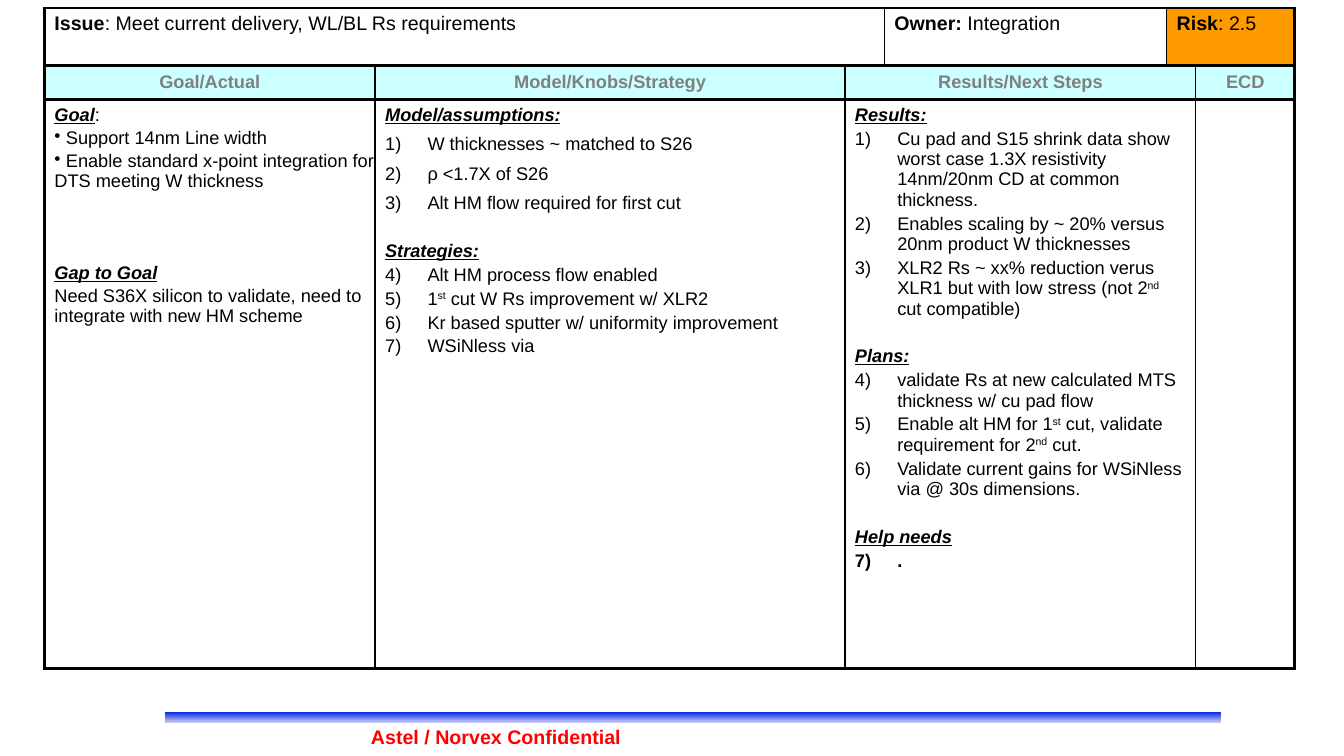
from lxml import etree
from pptx import Presentation
from pptx.dml.color import RGBColor
from pptx.enum import shapes, text
from pptx.oxml import ns
from pptx.util import Inches, Pt

BLACK = RGBColor(0, 0, 0)
WHITE = RGBColor(255, 255, 255)
GRAY = RGBColor(0x80, 0x80, 0x80)
RED = RGBColor(255, 0, 0)
CYAN = RGBColor(0xCC, 255, 255)
ORANGE = RGBColor(255, 0x99, 0)
BLUE = RGBColor(0, 0x20, 0xE0)
PALE = RGBColor(0xDA, 0xDA, 0xF6)

HEADS = ["Goal/Actual", "Model/Knobs/Strategy", "Results/Next Steps", "ECD"]
TOP = [("Issue", ": Meet current delivery, WL/BL Rs requirements"),
       ("Owner:", " Integration"), ("Risk", ": 2.5")]
GOALS = ["Support 14nm Line width",
         "Enable standard x-point integration for DTS meeting W thickness"]
GAP = "Need S36X silicon to validate, need to integrate with new HM scheme"
MODEL = [
    ("Model/assumptions:", 6.5, [
        "W thicknesses ~ matched to S26",
        "ρ <1.7X of S26",
        "Alt HM flow required for first cut"]),
    ("Strategies:", 2.6, [
        "Alt HM process flow enabled",
        "1^st^ cut W Rs improvement w/ XLR2",
        "Kr based sputter w/ uniformity improvement",
        "WSiNless via"])]
STEPS = [
    ("Results:", 2.6, [
        "Cu pad and S15 shrink data show worst case 1.3X resistivity "
        "14nm/20nm CD at common thickness.",
        "Enables scaling by ~ 20% versus 20nm product W thicknesses",
        "XLR2 Rs ~ xx% reduction verus XLR1 but with low stress "
        "(not 2^nd^ cut compatible)"]),
    ("Plans:", 2.6, [
        "validate Rs at new calculated MTS thickness w/ cu pad flow",
        "Enable alt HM for 1^st^ cut, validate requirement for 2^nd^ cut.",
        "Validate current gains for WSiNless via @ 30s dimensions."]),
    ("Help needs", 2.6, ["."])]


def style(para, size=13, color=BLACK, bold=False):
    """Set the common font of a paragraph."""
    font = para.font
    font.name, font.size, font.bold = "Arial", Pt(size), bold
    font.color.rgb = color


def add_para(frame, gap=0):
    """Return the empty first paragraph, or a new one with space before it."""
    first = frame.paragraphs[0]
    if not first.runs:
        return first
    para = frame.add_paragraph()
    para.space_before = Pt(gap)
    return para


def add_runs(para, words):
    """Add words, raising the parts between carets."""
    for i, part in enumerate(words.split("^")):
        run = para.add_run()
        run.text = part
        if i % 2:
            run._r.get_or_add_rPr().set("baseline", "30000")


def add_head(frame, words, gap=0):
    """Add a bold, italic, underlined heading."""
    para = add_para(frame, gap)
    run = para.add_run()
    run.text = words
    style(para)
    run.font.bold = run.font.italic = run.font.underline = True
    return para


def add_bullet(para, tag, indent=0, **attrs):
    """Give a paragraph a bullet element and a hanging indent."""
    props = para._p.get_or_add_pPr()
    props.set("marL", str(Inches(indent)))
    props.set("indent", str(Inches(-indent)))
    mark = etree.SubElement(props, ns.qn(tag))
    for key, value in attrs.items():
        mark.set(key, value)


def add_lists(frame, groups):
    """Add headed lists whose numbers run on from one to the next."""
    start = 1
    for head, gap, items in groups:
        add_head(frame, head, 19.5)
        for item in items:
            para = add_para(frame, gap)
            add_bullet(para, "a:buAutoNum", 0.42,
                       type="arabicParenR", startAt=str(start))
            add_runs(para, item)
            style(para, bold=item == ".")
        start += len(items)


def add_goals(frame):
    """Fill the goal cell."""
    add_head(frame, "Goal")
    colon = frame.paragraphs[0].add_run()
    colon.text = ":"
    for goal in GOALS:
        para = add_para(frame, 1.95)
        add_bullet(para, "a:buChar", char="•")
        add_runs(para, " " + goal)
        style(para)
    add_head(frame, "Gap to Goal", 51)
    para = add_para(frame, 1.95)
    add_runs(para, GAP)
    style(para)


def set_edges(cell, first, last):
    """Draw thick outer and row lines, and thin lines between columns."""
    props = cell._tc.get_or_add_tcPr()
    sides = {"L": first, "R": last, "T": True, "B": True}
    for side, thick in sides.items():
        line = etree.SubElement(props, ns.qn("a:ln" + side))
        line.set("w", str(Pt(2.25 if thick else 1)))
        fill = etree.SubElement(line, ns.qn("a:solidFill"))
        etree.SubElement(fill, ns.qn("a:srgbClr")).set("val", str(BLACK))


def add_grid(slide, top, cols, rows):
    """Add a bordered table without a banded style."""
    frame = slide.shapes.add_table(len(rows), len(cols), Inches(0.44), Inches(top),
                                   Inches(sum(cols)), Inches(sum(rows)))
    grid = frame.table
    grid.first_row = grid.horz_banding = False
    for col, width in zip(grid.columns, cols):
        col.width = Inches(width)
    for row, height in zip(grid.rows, rows):
        row.height = Inches(height)
        for i, cell in enumerate(row.cells):
            set_edges(cell, i == 0, i == len(cols) - 1)
            cell.fill.background()
    return grid


def add_plan(slide):
    """Add the main table."""
    grid = add_grid(slide, 0.65, [3.28, 4.66, 3.48, 0.98], [0.34, 5.64])
    for i, head in enumerate(HEADS):
        cell = grid.cell(0, i)
        cell.fill.solid()
        cell.fill.fore_color.rgb = CYAN
        cell.vertical_anchor = text.MSO_ANCHOR.MIDDLE
        para = cell.text_frame.paragraphs[0]
        para.text = head
        para.alignment = text.PP_ALIGN.CENTER
        style(para, color=GRAY, bold=True)
    grid.cell(1, 0).margin_right = Inches(0.01)
    add_goals(grid.cell(1, 0).text_frame)
    add_lists(grid.cell(1, 1).text_frame, MODEL)
    add_lists(grid.cell(1, 2).text_frame, STEPS)


def add_top(slide):
    """Add the issue, owner and risk row."""
    grid = add_grid(slide, 0.08, [8.33, 2.8, 1.27], [0.57])
    for i, (label, value) in enumerate(TOP):
        para = grid.cell(0, i).text_frame.paragraphs[0]
        lead = para.add_run()
        lead.text = label
        lead.font.bold = True
        add_runs(para, value)
        style(para, 14)
    risk = grid.cell(0, 2).fill
    risk.solid()
    risk.fore_color.rgb = ORANGE


def add_bar(slide):
    """Add the shaded footer bar."""
    bar = slide.shapes.add_shape(shapes.MSO_SHAPE.RECTANGLE, Inches(1.63),
                                 Inches(7.06), Inches(10.49), Inches(0.12))
    bar.shadow.inherit = False
    bar.fill.gradient()
    bar.fill.gradient_angle = 270
    for stop, color in zip(bar.fill.gradient_stops, (BLUE, PALE)):
        stop.color.rgb = color
    bar.line.color.rgb = WHITE
    bar.line.width = Pt(1)


def add_note(slide):
    """Add the footer text."""
    box = slide.shapes.add_textbox(Inches(2.79), Inches(7.14), Inches(4.26), Inches(0.26))
    box.text_frame.word_wrap = True
    para = box.text_frame.paragraphs[0]
    para.text = "Astel / Norvex Confidential"
    para.alignment = text.PP_ALIGN.CENTER
    style(para, 14, RED, True)


def main():
    """Build and save the slide."""
    deck = Presentation()
    deck.slide_width, deck.slide_height = Inches(13.33), Inches(7.5)
    slide = deck.slides.add_slide(deck.slide_layouts[6])
    for add in (add_bar, add_plan, add_top, add_note):
        add(slide)
    deck.save("out.pptx")


if __name__ == "__main__":
    main()
